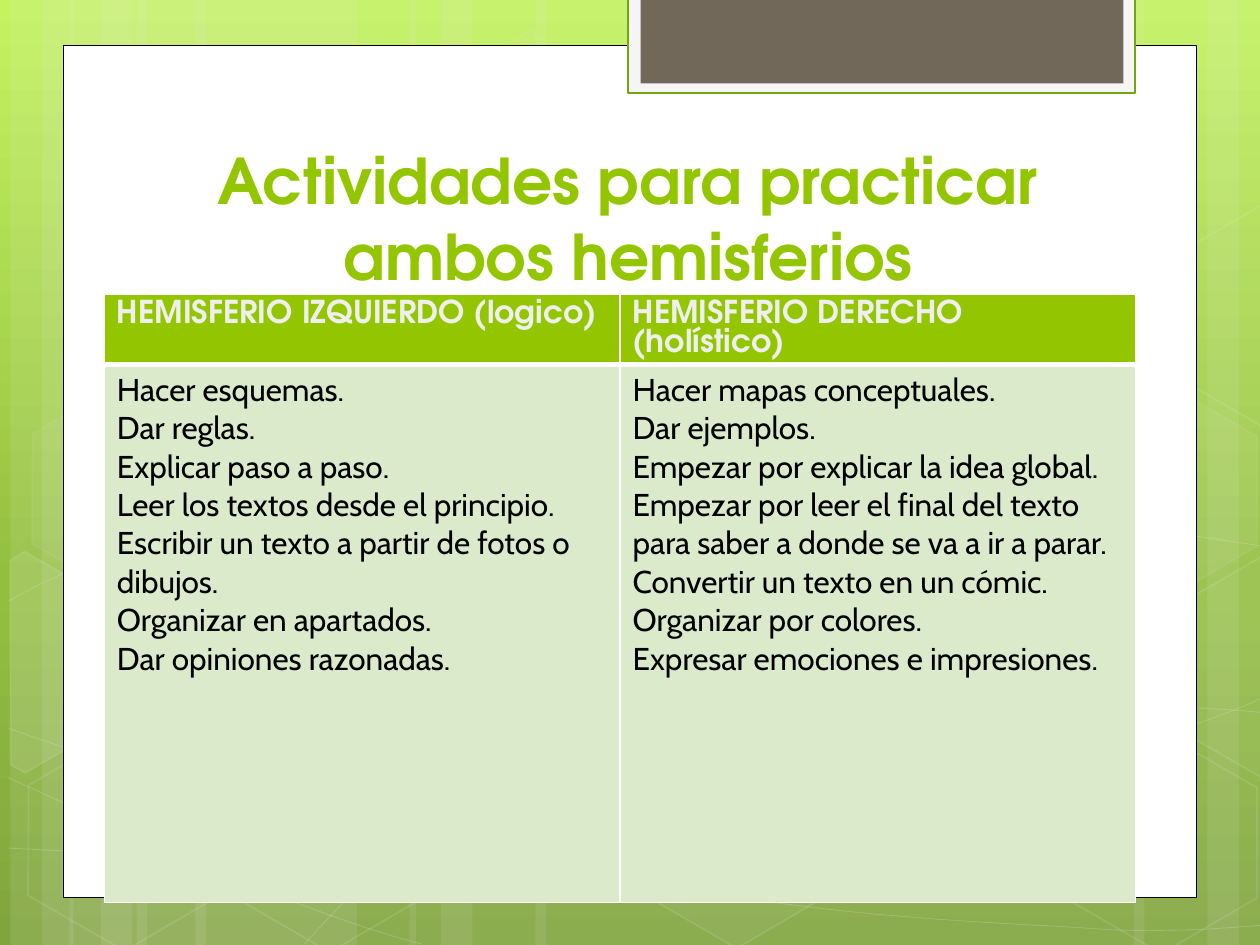
from copy import deepcopy
from lxml import etree
from pptx import Presentation
from pptx import util as u
from pptx.dml.color import RGBColor
from pptx.enum import shapes, text
from pptx.oxml.ns import qn

Pt = u.Pt
HUES = {"top": "C3F35F", "mid": "93BF3F", "low": "81A53E", "veil": "EFEFEF",
        "panel": "FFFFFF", "edge": "000000", "tab": "F5F5F5", "rim": "74A510",
        "block": "71685A", "lime": "94C600", "pale": "DCEACC", "ink": "000000"}
HEAD, BODY = "TeX Gyre Adventor", "Cabin"
BOX, HEX = shapes.MSO_SHAPE.RECTANGLE, shapes.MSO_SHAPE.HEXAGON

# Each curve: a start point, then Bézier triples (two handles and an end)
CURVES = [
    [(5, 484.6), (43.9, 486.7), (82.8, 488.9), (136.8, 488.2),
     (190.8, 487.4), (257.8, 486), (329.8, 478.8),
     (401.8, 471.6), (504, 457.9), (570.2, 444.2),
     (635.8, 430.6), (703.4, 409), (725, 396.7)],
    [(5, 343.4), (25.9, 331.9), (46.8, 321.1), (87.1, 310.3),
     (128.2, 299.5), (186.5, 283.7), (249.8, 278.6),
     (313.9, 273.6), (391.7, 272.9), (470.9, 278.6),
     (550.1, 284.4), (681.8, 306.7), (725, 312.5)],
    [(4.3, 444.2), (91.4, 483.8), (177.8, 523.4), (240.5, 539.3)],
    [(5, 416.2), (27.4, 424.1), (50.4, 432), (92.2, 443.5),
     (133.9, 454.3), (196.6, 472.3), (257, 484.6),
     (316.8, 496.8), (392.4, 509.8), (452.2, 517),
     (511.9, 524.9), (576, 527.8), (614.2, 529.9),
     (651.6, 532.8), (661.7, 531.4), (680.4, 531.4),
     (699.1, 530.6), (712.1, 529.2), (725, 528.5)],
    [(174.2, 539.3), (187.2, 524.9), (200.2, 510.5), (217.4, 497.5),
     (234.7, 484.6), (259.2, 470.2), (279.4, 460.1),
     (299.5, 450), (311.8, 445.7), (338.4, 438.5),
     (364.3, 431.3), (412.6, 421.2), (437.8, 416.2),
     (463.7, 411.1), (467.3, 411.1), (489.6, 409.7),
     (511.9, 407.5), (547.2, 405.4), (571.7, 404.6),
     (596.9, 403.9), (637.9, 404.6), (637.9, 404.6),
     (637.9, 404.6), (686.2, 404.6), (686.2, 404.6),
     (699.1, 405.4), (711.4, 406.1), (717.8, 406.8),
     (724.3, 407.5), (722.2, 406.8), (724.3, 407.5)],
]
# Left, top, fill opacity, line opacity
HEXES = [(240.5, 26, 4, 8), (357.8, 424, 6, 12), (7.9, 425.5, 0, 12),
         (10.1, 224.6, 7, 8), (125.3, 426.2, 0, 12), (542.2, 326.2, 10, 12),
         (600.5, 427, 0, 12), (600.5, 226.1, 7, 8)]
# Hexagons cut by the slide's edges, before they are turned
LEFT = [(0, 8.6), (4.3, 0), (68, 0), (99.4, 55), (68, 109.4), (58.3, 109.4)]
RIGHT = [(0, 54), (31, 0), (37.4, 0), (97.9, 104.4), (94.3, 109.4), (31.3, 109.4)]
PARTS = [(LEFT, -23.8, 330.5, 10), (RIGHT, 660.2, 319.7, 4), (RIGHT, 660.2, 118.8, 0)]

HEADS = ["HEMISFERIO IZQUIERDO (logico)", "HEMISFERIO DERECHO (holístico)"]
TASKS = [
    ["Hacer esquemas.", "Dar reglas.", "Explicar paso a paso.",
     "Leer los textos desde el principio.",
     "Escribir un texto a partir de fotos o dibujos.",
     "Organizar en apartados.", "Dar opiniones razonadas."],
    ["Hacer mapas conceptuales.", "Dar ejemplos.",
     "Empezar por explicar la idea global.",
     "Empezar por leer el final del texto para saber a donde se va a ir a parar.",
     "Convertir un texto en un cómic.", "Organizar por colores.",
     "Expresar emociones e impresiones."],
]


def rgb(hue):
    return RGBColor.from_string(HUES[hue])


def tint(fill, hue, node, alpha):
    """Solid fill; node holds the solidFill that takes the opacity."""
    fill.solid()
    fill.fore_color.rgb = rgb(hue)
    if alpha < 100:
        clr = node.find(qn("a:solidFill"))[0]
        etree.SubElement(clr, qn("a:alpha"), val=str(alpha * 1000))


def paint(shape, hue=None, alpha=100, line=None, width=1, clear=100):
    shape.shadow.inherit = False
    props = shape.element.spPr
    if hue and alpha:
        tint(shape.fill, hue, props, alpha)
    else:
        shape.fill.background()
    if line:
        shape.line.width = Pt(width)
        tint(shape.line.fill, line, props.find(qn("a:ln")), clear)
    else:
        shape.line.fill.background()


def add(slide, kind, left, top, wide, high, **look):
    shape = slide.shapes.add_shape(kind, Pt(left), Pt(top), Pt(wide), Pt(high))
    paint(shape, **look)
    return shape


def trace(slide, points, close, left=0, top=0, **look):
    # Hundredths of a point keep the outline exact
    dots = [(round(x * 100), round(y * 100)) for x, y in points]
    pen = slide.shapes.build_freeform(*dots[0], scale=Pt(1) / 100)
    pen.add_line_segments(dots[1:], close=close)
    shape = pen.convert_to_shape(Pt(left), Pt(top))
    paint(shape, **look)
    return shape


def bend(shape):
    """Join each three line segments into one cubic Bézier."""
    track = shape.element.find(".//" + qn("a:path"))
    segs = track.findall(qn("a:lnTo"))
    for i in range(0, len(segs), 3):
        curve = etree.SubElement(track, qn("a:cubicBezTo"))
        for seg in segs[i:i + 3]:
            curve.append(seg[0])
            track.remove(seg)


def shade(slide):
    fill = slide.background.fill
    fill.gradient()
    fill.gradient_angle = 270
    stops = slide.element.find(".//" + qn("a:gsLst"))
    stops.append(deepcopy(stops[-1]))
    for stop, hue, pos in zip(fill.gradient_stops, ("top", "mid", "low"), (0, 0.62, 1)):
        stop.color.rgb = rgb(hue)
        stop.position = pos


def decor(slide):
    # Bands in threes, one set mirrored from the right
    trio = [(72, 126), (0, 36), (18, 60)]
    bands = [(x + off, wide) for x in (6, 39.6) for off, wide in trio]
    bands += [(726 - off - wide, wide) for off, wide in trio]
    bands += [(306, 222), (234, 36), (252, 60)]
    for left, wide in bands:
        add(slide, BOX, left, 0, wide, 540, hue="veil", alpha=10)
    for knots in CURVES:
        bend(trace(slide, knots, False, line="veil", width=0.5, clear=20))
    for left, top, alpha, clear in HEXES:
        cell = add(slide, HEX, left, top, 126, 109.4, hue="veil", alpha=alpha,
                   line="veil", clear=clear)
        cell.adjustments[0] = 0.285
        cell.rotation = 30
    for points, left, top, alpha in PARTS:
        part = trace(slide, points, True, left, top, hue="veil", alpha=alpha,
                     line="veil", clear=12)
        part.rotation = 30


def frame(slide):
    add(slide, BOX, 36, 26, 648, 487, hue="panel", line="edge", width=0.5)
    add(slide, BOX, 359, -1.4, 289.6, 54.7, hue="tab", line="rim", width=1.25)
    add(slide, BOX, 366, -1.4, 276, 49, hue="block")


def style(par, size, face, hue, bold, pitch=None):
    par.font.size, par.font.name, par.font.bold = Pt(size), face, bold
    par.font.color.rgb = rgb(hue)
    if pitch:
        par.line_spacing = Pt(pitch)


def head(slide):
    title = slide.shapes.title
    title.element.getparent().append(title.element)  # bring to front
    title.left, title.top, title.width, title.height = map(Pt, (82.3, 81, 553, 90))
    box = title.text_frame
    box.text = "Actividades para practicar ambos hemisferios"
    box.word_wrap = True
    box.auto_size = text.MSO_AUTO_SIZE.NONE
    box.vertical_anchor = text.MSO_ANCHOR.BOTTOM
    par = box.paragraphs[0]
    par.alignment = text.PP_ALIGN.CENTER
    style(par, 36, HEAD, "lime", True, 43.4)


def edge(cell, base):
    props = cell._tc.get_or_add_tcPr()
    for i, (side, width) in enumerate(zip("LRTB", (1, 1, 1, base))):
        line = etree.Element(qn("a:ln" + side), w=str(Pt(width)))
        fill = etree.SubElement(line, qn("a:solidFill"))
        etree.SubElement(fill, qn("a:srgbClr"), val=HUES["panel"])
        props.insert(i, line)


def grid(slide):
    table = slide.shapes.add_table(2, 2, Pt(59.6), Pt(168), Pt(589.4), Pt(347.6)).table
    table.first_row = table.horz_banding = False
    table.rows[0].height, table.rows[1].height = Pt(40.2), Pt(307.4)
    for col, (name, tasks) in enumerate(zip(HEADS, TASKS)):
        table.columns[col].width = Pt(294.7)
        for row, lines, hue, base, look in (
                (0, [name], "lime", 3, (18, HEAD, "veil", True, 16.5)),
                (1, tasks, "pale", 1, (18, BODY, "ink", False))):
            cell = table.cell(row, col)
            cell.text = "\n".join(lines)
            cell.fill.solid()
            cell.fill.fore_color.rgb = rgb(hue)
            edge(cell, base)
            for par in cell.text_frame.paragraphs:
                style(par, *look)


def main():
    deck = Presentation()
    deck.slide_width, deck.slide_height = Pt(720), Pt(540)
    slide = deck.slides.add_slide(deck.slide_layouts[5])
    shade(slide)
    decor(slide)
    frame(slide)
    head(slide)
    grid(slide)
    deck.save("out.pptx")


if __name__ == "__main__":
    main()
